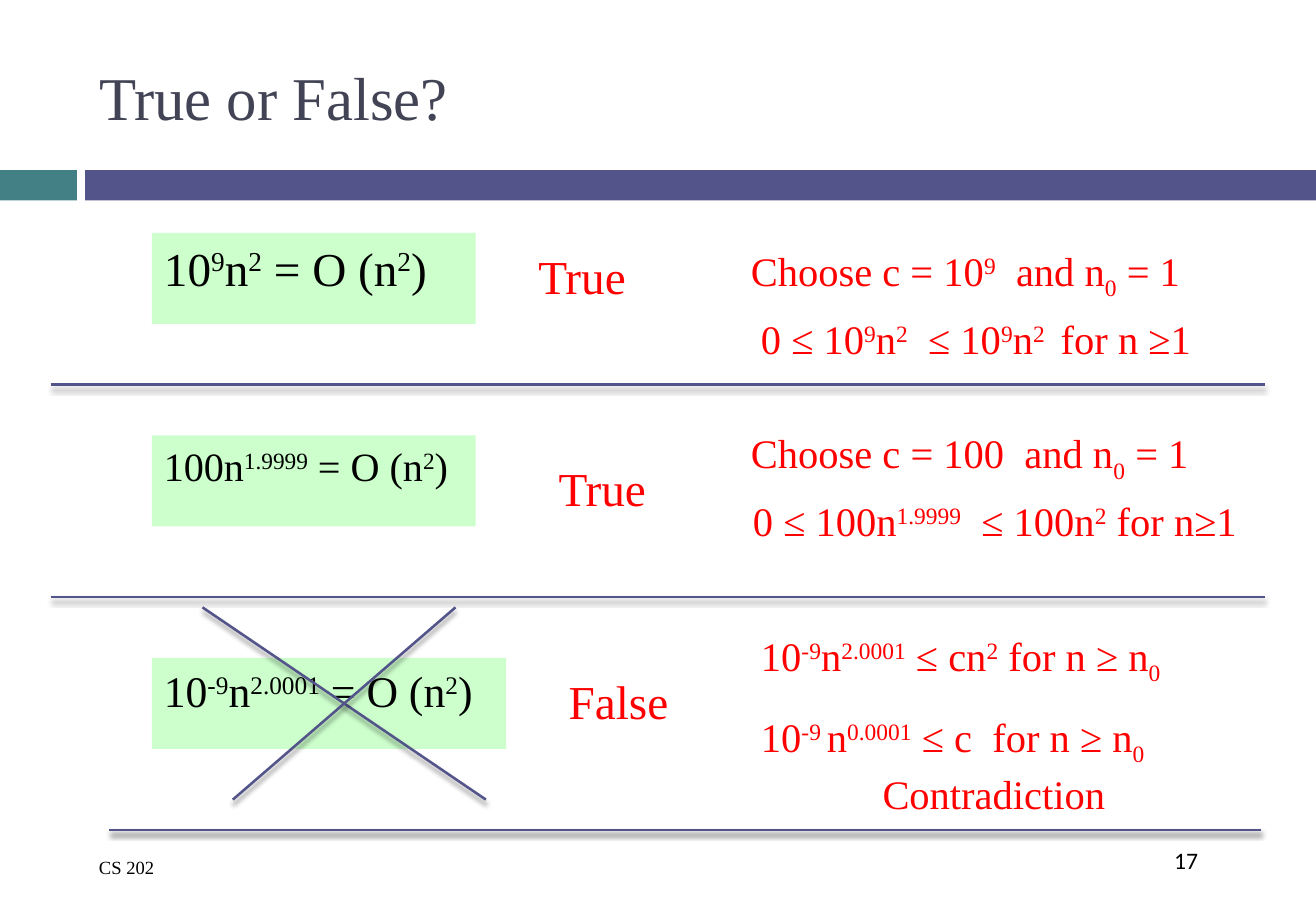
from lxml import etree
from pptx import Presentation
from pptx.dml.color import RGBColor
from pptx.enum.shapes import MSO_CONNECTOR, MSO_SHAPE
from pptx.enum.text import MSO_ANCHOR, MSO_AUTO_SIZE, PP_ALIGN
from pptx.oxml.ns import qn
from pptx.util import Emu, Pt

PX = 7620  # 120 px to the inch
STRAIGHT = MSO_CONNECTOR.STRAIGHT
RECT = MSO_SHAPE.RECTANGLE
TOP, MIDDLE = MSO_ANCHOR.TOP, MSO_ANCHOR.MIDDLE
NO_FIT, GROW = MSO_AUTO_SIZE.NONE, MSO_AUTO_SIZE.SHAPE_TO_FIT_TEXT
LEFT = PP_ALIGN.LEFT

BLACK = RGBColor(0x00, 0x00, 0x00)
RED = RGBColor(0xFF, 0x00, 0x00)
SLATE = RGBColor(0x42, 0x44, 0x56)
INDIGO = RGBColor(0x53, 0x54, 0x8A)
TEAL = RGBColor(0x43, 0x80, 0x86)
MINT = RGBColor(0xCC, 0xFF, 0xCC)
SERIF = "Times New Roman"
SHIFTS = {"^": "30000", "_": "-25000"}

# Formulas are split at "|"; a part led by ^ is raised, one led by _ is lowered.
# top, bottom, formula (dy, width, size, text), verdict (x, dy, width, text),
# notes (x, dy, width, text)
ROWS = [
    (200, 380, (30, 320, 28, "10|^9|n|^2| = O (n|^2|)"), (520, 10, 113, "True"),
     [(730, 10, 456, "Choose c = 10|^9|  and n|_0| = 1"),
      (740, 80, 468, "0 ≤ 10|^9|n|^2|  ≤ 10|^9|n|^2 | for n ≥1")]),
    (380, 590, (50, 320, 23.8, "100n|^1.9999| = O (n|^2|)"), (540, 40, 113, "True"),
     [(730, 10, 462, "Choose c = 100  and n|_0| = 1"),
      (732, 80, 524, "0 ≤ 100n|^1.9999|  ≤ 100n|^2| for n≥1")]),
    (590, 820, (60, 350, 25.9, "10|^-9|n|^2.0001| = O (n|^2|)"), (550, 40, 124, "False"),
     [(740, 0, 439, "10|^-9|n|^2.0001| ≤ cn|^2| for n ≥ n|_0"),
      (740, 80, 422, "10|^-9 |n|^0.0001| ≤ c  for n ≥ n|_0"),
      (860, 140, 246, "Contradiction")]),
]


def px(*lengths):
    return [Emu(n * PX) for n in lengths]


def place(sp, x, y, w, h):
    sp.left, sp.top, sp.width, sp.height = px(x, y, w, h)


def write(sp, text, size, color=BLACK, font=SERIF, before=0, spacing=1.0,
          anchor=TOP, wrap=True, fit=NO_FIT):
    tf = sp.text_frame
    tf.word_wrap, tf.auto_size, tf.vertical_anchor = wrap, fit, anchor
    p = tf.paragraphs[0]
    p.alignment, p.line_spacing, p.space_before = LEFT, spacing, Pt(before)
    for part in text.split("|"):
        shift = SHIFTS.get(part[0])
        r = p.add_run()
        r.text = part[1:] if shift else part
        r.font.name, r.font.size, r.font.color.rgb = font, Pt(size), color
        if shift:
            r.font._element.set("baseline", shift)
    return p


def add_text(slide, box, text, size, **style):
    write(slide.shapes.add_textbox(*px(*box)), text, size, **style)


def add_block(slide, box, color):
    sp = slide.shapes.add_shape(RECT, *px(*box))
    sp.shadow.inherit = False
    sp.fill.solid()
    sp.fill.fore_color.rgb = color
    sp.line.fill.background()
    return sp


def add_rule(slide, x1, y1, x2, y2):
    line = slide.shapes.add_connector(STRAIGHT, *px(x1, y1, x2, y2))
    line.line.color.rgb = INDIGO
    line.line.width = Pt(1.5)
    effects = etree.SubElement(line._element.spPr, qn("a:effectLst"))
    shadow = etree.SubElement(effects, qn("a:outerShdw"), blurRad="38100",
                              dist="30480", dir="5400000", rotWithShape="0")
    black = etree.SubElement(shadow, qn("a:srgbClr"), val="000000")
    etree.SubElement(black, qn("a:alpha"), val="45000")


def add_header(slide, x, y, w):
    add_block(slide, (x, y + 168, 76, 30), TEAL)
    add_block(slide, (x + 84, y + 168, w - 84, 30), INDIGO)
    title = slide.shapes.title
    place(title, x + 86, y + 30, 1160, 130)
    write(title, "True or False?", 36, color=SLATE, anchor=MIDDLE)


def add_formula(slide, box, text, size, body=None):
    if body is None:
        sp = add_block(slide, box, MINT)
    else:
        sp = body
        place(sp, *box)
        sp.fill.solid()
        sp.fill.fore_color.rgb = MINT
    p = write(sp, text, size, before=7)
    pPr = p._p.get_or_add_pPr()
    pPr.set("marL", "0")
    pPr.set("indent", "0")
    etree.SubElement(pPr, qn("a:buNone"))


def add_row(slide, top, formula, verdict, notes, body=None):
    dy, w, size, text = formula
    add_formula(slide, (150, top + dy, w, 90), text, size, body)
    style = dict(color=RED, spacing=1.5, wrap=False, fit=GROW)
    x, dy, w, text = verdict
    add_text(slide, (x, top + dy, w, 97), text, 28, before=5.6, **style)
    for x, dy, w, text in notes:
        add_text(slide, (x, top + dy, w, 85), text, 24, before=4.8, **style)


def add_cross(slide, x, y):
    add_rule(slide, x, y, x + 280, y + 190)
    add_rule(slide, x + 250, y, x + 30, y + 190)


def add_footer(slide, x, y):
    add_rule(slide, x + 22, y, x + 1160, y)
    add_text(slide, (x, y + 20, 239, 35), "CS 202", 11)
    add_text(slide, (x + 1062, y + 10, 97, 60), "17", 14, font="Calibri")


def main():
    prs = Presentation()
    prs.slide_width, prs.slide_height = px(1300, 900)
    slide = prs.slides.add_slide(prs.slide_layouts[1])
    add_header(slide, 0, 0, 1300)

    # Claims, with a rule between each two
    body = slide.placeholders[1]
    for top, bottom, formula, verdict, notes in ROWS:
        add_row(slide, top, formula, verdict, notes, body)
        body = None
        if bottom < ROWS[-1][1]:
            add_rule(slide, 50, bottom, 1250, bottom)

    # The false claim is struck out
    add_cross(slide, 200, 600)
    add_footer(slide, 86, ROWS[-1][1])
    prs.save("out.pptx")


if __name__ == "__main__":
    main()
